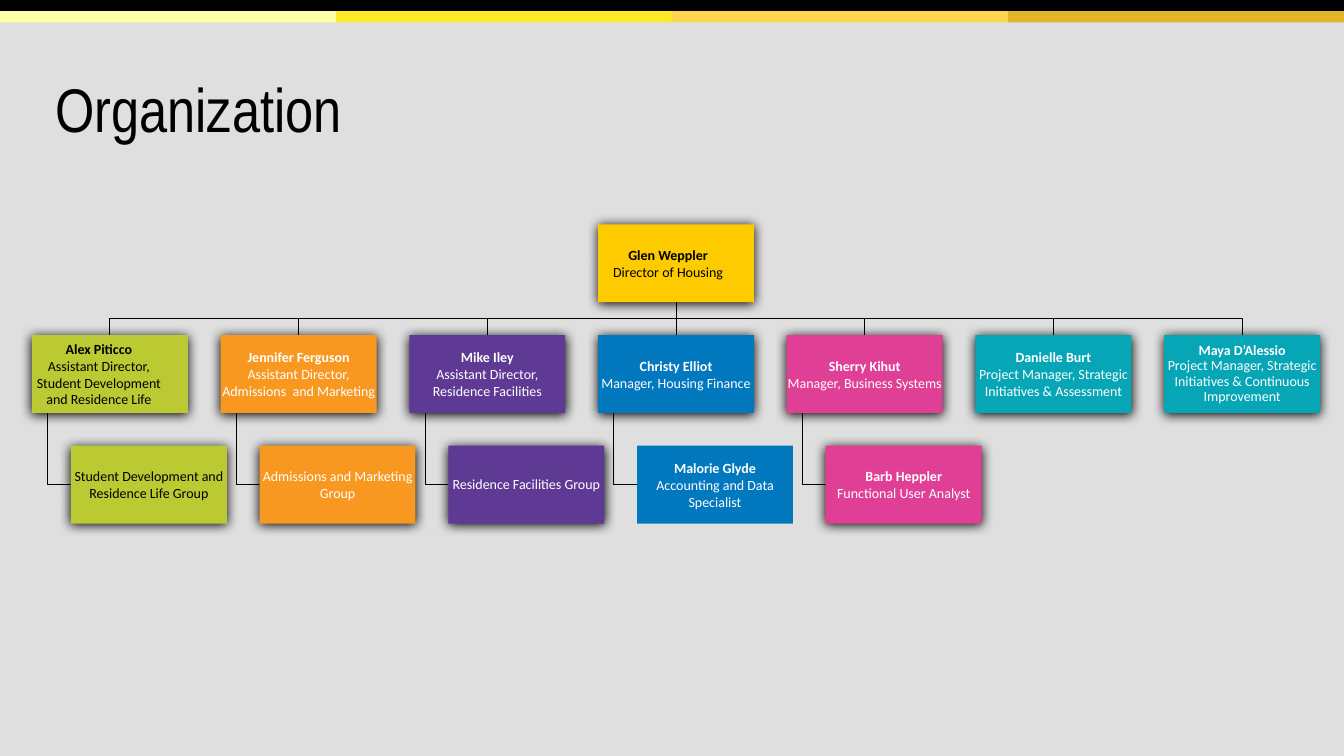
from lxml import etree
from pptx import Presentation
from pptx.dml.color import RGBColor
from pptx.enum import shapes, text
from pptx.oxml import ns
from pptx.util import Pt

BLACK, WHITE = "000000", "FFFFFF"
LIME, ORANGE, PURPLE = "BBCA32", "F89820", "5F3A95"
BLUE, PINK, TEAL = "0278BE", "E03F96", "06A6B7"

# Every distance in the chart derives from the height of a box.
BOX_H = 55.7
BOX_W = 2 * BOX_H
GAP = 0.42 * BOX_H
COLUMN_STEP = BOX_W + GAP
ROW_STEP = BOX_H + GAP
CHART_LEFT, CHART_TOP = 22.8, 160.2
MIDDLE_COLUMN = 3
HEADS_TOP = CHART_TOP + ROW_STEP
GROUPS_TOP = HEADS_TOP + ROW_STEP


def paint(fill, color):
    fill.solid()
    fill.fore_color.rgb = RGBColor.from_string(color)


def add_person(left, top, color, ink, name, role, spacing=None, shift=0, shadow=True):
    """Add a box with a bold name over a role; shift is the name's right margin."""
    box = page.shapes.add_shape(shapes.MSO_SHAPE.RECTANGLE,
                                Pt(left), Pt(top), Pt(BOX_W), Pt(BOX_H))
    paint(box.fill, color)
    box.line.fill.background()
    box.shadow.inherit = False
    if shadow:
        effects = box._element.spPr.find(ns.qn("a:effectLst"))
        outer = etree.SubElement(effects, ns.qn("a:outerShdw"), blurRad=str(Pt(8.5)),
                                 dist=str(Pt(1)), dir="5400000", rotWithShape="0")
        etree.SubElement(outer, ns.qn("a:srgbClr"), val=BLACK)

    frame = box.text_frame
    frame.word_wrap = True
    frame.vertical_anchor = text.MSO_ANCHOR.MIDDLE
    frame.margin_left = frame.margin_right = Pt(0.7)
    frame.margin_top = frame.margin_bottom = Pt(0.7)
    frame.text = f"{name}\n{role}" if name else role
    for para in frame.paragraphs:
        para.alignment = text.PP_ALIGN.CENTER
        if spacing:
            para.line_spacing = spacing
        for span in para.runs:
            span.font.name = "Calibri"
            span.font.size = Pt(10)
            span.font.bold = span.text == name
            span.font.color.rgb = RGBColor.from_string(ink)
    if shift:
        frame.paragraphs[0]._p.get_or_add_pPr().set("marR", str(Pt(shift)))
    return box


deck = Presentation()
deck.slide_width, deck.slide_height = Pt(960), Pt(540)
page = deck.slides.add_slide(deck.slide_layouts[6])
paint(page.background.fill, "DFDFDF")

# Top band
bands = [(0, 0, 960, 9, BLACK)]
for index, color in enumerate(["FFFFAA", "FFEA29", "FFD54F", "E4B429"]):
    bands.append((240 * index, 8, 240, 8, color))
for left, top, width, height, color in bands:
    band = page.shapes.add_shape(shapes.MSO_SHAPE.RECTANGLE,
                                 Pt(left), Pt(top), Pt(width), Pt(height))
    paint(band.fill, color)
    band.line.fill.background()
    band.shadow.inherit = False

# Title
title = page.shapes.add_textbox(Pt(32.4), Pt(53.3), Pt(828), Pt(43.2))
title.text_frame.word_wrap = True
title.text_frame.text = "Organization"
heading = title.text_frame.paragraphs[0]
heading.line_spacing = 0.9
heading.runs[0].font.name = "Arial Narrow"
heading.runs[0].font.size = Pt(44)
heading.runs[0].font.color.rgb = RGBColor.from_string(BLACK)

# Column by column: color, ink, head, group, and extra options of each
columns = [
    (LIME, BLACK,
     ("Alex Piticco", "Assistant Director, Student Development and Residence Life"),
     ("", "Student Development and Residence Life Group"), {"shift": 15.7}, {}),
    (ORANGE, WHITE,
     ("Jennifer Ferguson", "Assistant Director, Admissions  and Marketing"),
     ("", "Admissions and Marketing Group"), {}, {}),
    (PURPLE, WHITE, ("Mike Iley", "Assistant Director, Residence Facilities"),
     ("", "Residence Facilities Group"), {}, {"spacing": 0.9}),
    (BLUE, WHITE, ("Christy Elliot", "Manager, Housing Finance"),
     ("Malorie Glyde", "Accounting and Data Specialist"), {}, {"shadow": False}),
    (PINK, WHITE, ("Sherry Kihut", "Manager, Business Systems"),
     ("Barb Heppler", "Functional User Analyst"), {}, {}),
    (TEAL, WHITE,
     ("Danielle Burt", "Project Manager, Strategic Initiatives & Assessment"),
     None, {}, {}),
    (TEAL, WHITE,
     ("Maya D’Alessio", "Project Manager, Strategic Initiatives & Continuous Improvement"),
     None, {"spacing": 0.9}, {}),
]

# Bent lines, placed behind the boxes
director_left = CHART_LEFT + MIDDLE_COLUMN * COLUMN_STEP
director_x = director_left + BOX_W / 2
director_bottom = CHART_TOP + BOX_H
branch_y = director_bottom + GAP / 2
routes = []
for index, (_, _, _, group, _, _) in enumerate(columns):
    left = CHART_LEFT + index * COLUMN_STEP
    head_x, stem_x = left + BOX_W / 2, left + BOX_W / 10
    if index != MIDDLE_COLUMN:
        routes.append([(director_x, director_bottom), (director_x, branch_y),
                       (head_x, branch_y), (head_x, HEADS_TOP)])
    if group:
        group_y = GROUPS_TOP + BOX_H / 2
        routes.append([(stem_x, HEADS_TOP + BOX_H), (stem_x, group_y),
                       (left + BOX_W / 4, group_y)])
for route in routes:
    start, *bends = [(Pt(x), Pt(y)) for x, y in route]
    builder = page.shapes.build_freeform(*start)
    builder.add_line_segments(bends, close=False)
    bent_line = builder.convert_to_shape()
    bent_line.fill.background()
    paint(bent_line.line.fill, BLACK)
    bent_line.line.width = Pt(0.5)
    bent_line.shadow.inherit = False

# Boxes
director = add_person(director_left, CHART_TOP, "FECB00", BLACK,
                      "Glen Weppler", "Director of Housing", shift=11.4)
heads = []
for index, (color, ink, head, group, head_options, group_options) in enumerate(columns):
    left = CHART_LEFT + index * COLUMN_STEP
    heads.append(add_person(left, HEADS_TOP, color, ink, *head, **head_options))
    if group:
        add_person(left + BOX_W / 4, GROUPS_TOP, color, ink, *group, **group_options)

# Straight line from the director to the middle head
trunk = page.shapes.add_connector(shapes.MSO_CONNECTOR.STRAIGHT, 0, 0, 0, 0)
trunk.begin_connect(director, 2)
trunk.end_connect(heads[MIDDLE_COLUMN], 0)
paint(trunk.line.fill, BLACK)
trunk.line.width = Pt(0.5)
etree.SubElement(trunk._element.spPr, ns.qn("a:effectLst"))

deck.save("out.pptx")
